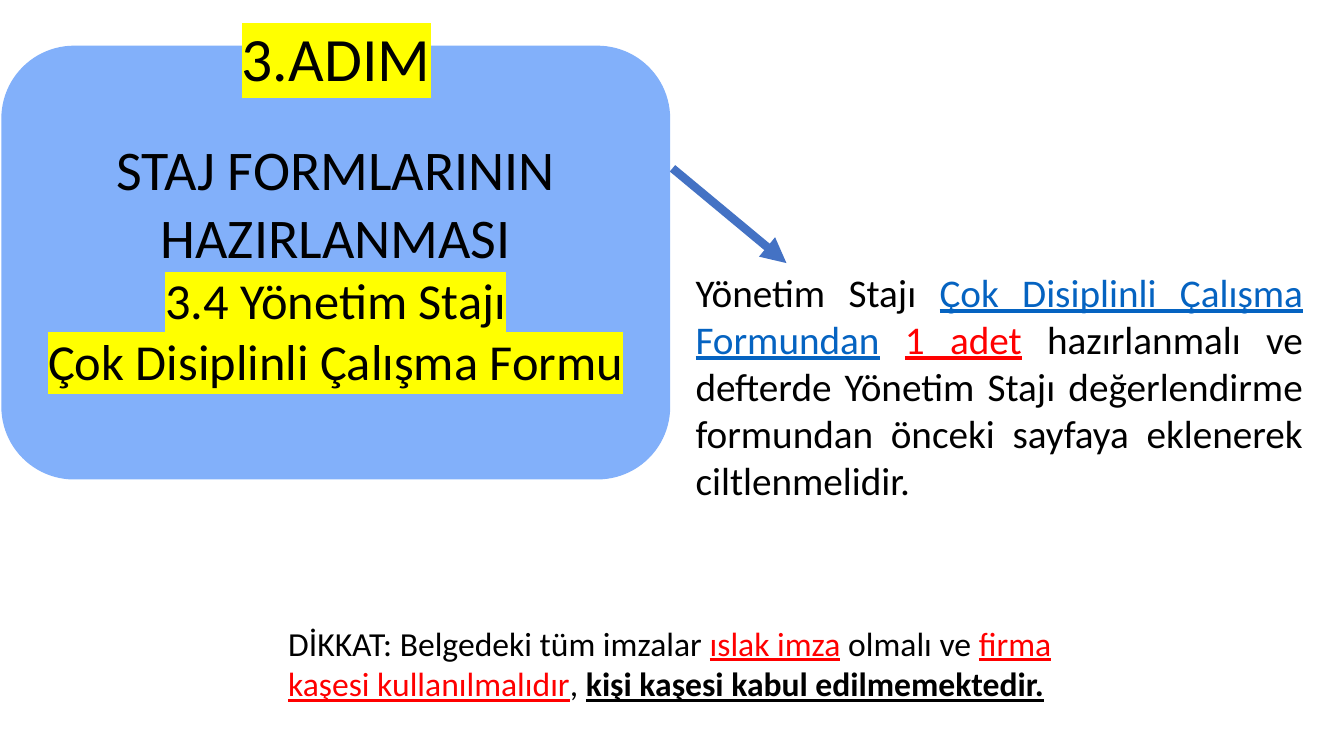
import pptx
import pptx.util
import pptx.dml.color
import pptx.enum.shapes
import pptx.enum.text
import pptx.oxml
import pptx.oxml.ns

PX = 9144  # 100 px to the inch
RGB = pptx.dml.color.RGBColor
BLACK = RGB(0x00, 0x00, 0x00)
RED = RGB(0xFF, 0x00, 0x00)
LINK_BLUE = RGB(0x05, 0x63, 0xC1)
PANEL_BLUE = RGB(0x82, 0xB0, 0xFA)
ARROW_BLUE = RGB(0x44, 0x72, 0xC4)
YELLOW = RGB(0xFF, 0xFF, 0x00)
ALIGN = pptx.enum.text.PP_ALIGN
ANCHOR = pptx.enum.text.MSO_ANCHOR
NS = pptx.oxml.ns.nsdecls("a")


def px(*lengths):
    return [pptx.util.Emu(n * PX) for n in lengths]


def add_run(p, text, size, color=BLACK, underline=None, bold=None, highlight=None):
    r = p.add_run()
    r.text = text
    r.font.size = pptx.util.Pt(size)
    r.font.color.rgb = color
    r.font.underline = underline
    r.font.bold = bold
    if highlight is not None:
        r.font.fill._xPr.append(pptx.oxml.parse_xml(
            f'<a:highlight {NS}><a:srgbClr val="{highlight}"/></a:highlight>'))
    r.font.name = "Calibri"


prs = pptx.Presentation()
prs.slide_width, prs.slide_height = px(1333, 750)
s = prs.slides.add_slide(prs.slide_layouts[5])

# Step panel
panel = s.shapes.add_shape(
    pptx.enum.shapes.MSO_SHAPE.ROUNDED_RECTANGLE, *px(2, 46, 662, 429))
panel.shadow.inherit = False
panel.fill.solid()
panel.fill.fore_color.rgb = PANEL_BLUE
panel.line.color.rgb = PANEL_BLUE
panel.line.width = pptx.util.Pt(1)
tf = panel.text_frame
tf.word_wrap = True
tf.vertical_anchor = ANCHOR.MIDDLE
panel_lines = [
    ("STAJ FORMLARININ HAZIRLANMASI", 40, None),
    ("3.4 Yönetim Stajı", 36, YELLOW),
    ("Çok Disiplinli Çalışma Formu", 36, YELLOW),
]
for i, (text, size, highlight) in enumerate(panel_lines):
    p = tf.add_paragraph() if i else tf.paragraphs[0]
    p.alignment = ALIGN.CENTER
    add_run(p, text, size, highlight=highlight)

# Title, in front of the panel
title = s.shapes.title
panel._element.addnext(title._element)
title.left, title.top, title.width, title.height = px(209, -11, 249, 145)
tf = title.text_frame
tf.word_wrap = True
tf.vertical_anchor = ANCHOR.MIDDLE
p = tf.paragraphs[0]
p.alignment = ALIGN.CENTER
p.line_spacing = 0.9
add_run(p, "3.ADIM", 44, highlight=YELLOW)

# Arrow from the panel to the instruction
arrow = s.shapes.add_connector(
    pptx.enum.shapes.MSO_CONNECTOR.STRAIGHT, *px(667, 167, 780, 261))
arrow.line.color.rgb = ARROW_BLUE
arrow.line.width = pptx.util.Pt(6)
arrow.line._get_or_add_ln().append(
    pptx.oxml.parse_xml(f'<a:tailEnd {NS} type="triangle"/>'))
arrow._element.spPr.append(pptx.oxml.parse_xml(f"<a:effectLst {NS}/>"))

# Instruction and warning
red_link = dict(color=RED, underline=True)
notes = [
    ((680, 261, 622, 246), 28, ALIGN.JUSTIFY, [
        ("Yönetim Stajı ", {}),
        ("Çok Disiplinli Çalışma Formundan", dict(color=LINK_BLUE, underline=True)),
        (" ", {}),
        ("1 adet", red_link),
        (" hazırlanmalı ve defterde Yönetim Stajı değerlendirme "
         "formundan önceki sayfaya eklenerek ciltlenmelidir.", {}),
    ]),
    ((276, 613, 848, 91), 24, ALIGN.LEFT, [
        ("DİKKAT: Belgedeki tüm imzalar ", {}),
        ("ıslak imza", red_link),
        (" olmalı ve ", {}),
        ("firma kaşesi kullanılmalıdır", red_link),
        (", ", {}),
        ("kişi kaşesi kabul edilmemektedir.", dict(bold=True, underline=True)),
    ]),
]
for box, size, alignment, runs in notes:
    tf = s.shapes.add_textbox(*px(*box)).text_frame
    tf.word_wrap = True
    tf.auto_size = pptx.enum.text.MSO_AUTO_SIZE.SHAPE_TO_FIT_TEXT
    p = tf.paragraphs[0]
    p.alignment = alignment
    for text, style in runs:
        add_run(p, text, size, **style)

prs.save("out.pptx")
